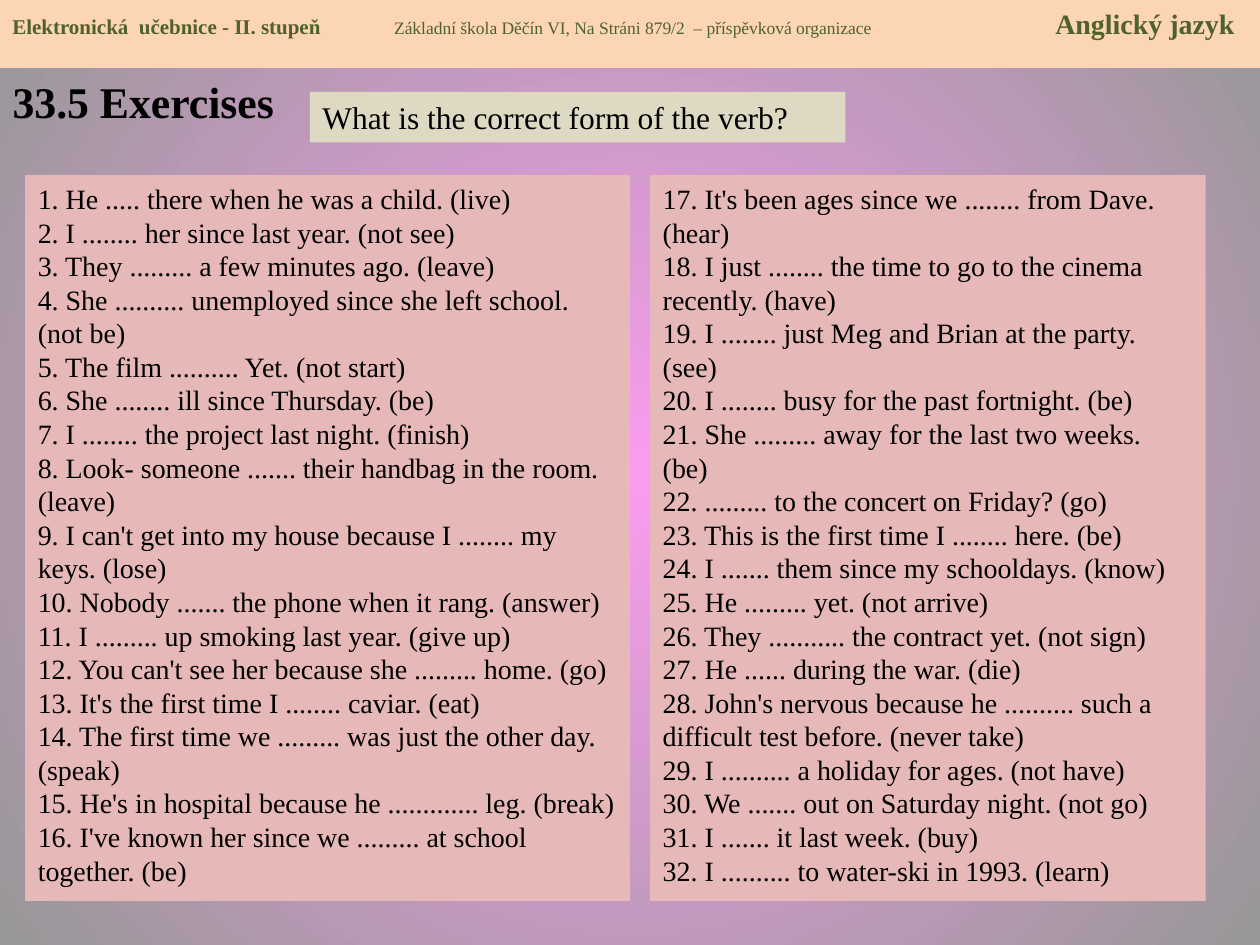
from lxml import etree
from pptx import Presentation
from pptx.dml.color import RGBColor
from pptx.enum.shapes import MSO_SHAPE
from pptx.enum.text import MSO_ANCHOR, MSO_AUTO_SIZE, PP_ALIGN
from pptx.oxml.ns import qn
from pptx.util import Inches, Pt

THEME = {
    "font": "Times New Roman",
    "ink": "000000", "green": "4F6228",
    "banner": "FCD5B5", "prompt": "DDD9C3", "panel": "E6B9B8",
    "glow": "FA9CEF", "edge": "979797",
    "title": 25, "question": 18, "list": 16, "subject": 16, "book": 12, "school": 10,
}
WIDTH, HEIGHT = 10, 7.5
BANNER_HEIGHT = 0.54
PANEL_TOP, PANEL_HEIGHT = 1.39, 5.76
PANELS = [(0.2, 4.8), (5.16, 4.41)]
HEADER_TABS = [("l", 3.03), ("r", 9.7)]

HEADER = [
    ("Elektronická  učebnice - II. stupeň", "book", True),
    ("\tZákladní škola Děčín VI, Na Stráni 879/2  – příspěvková organizace", "school", False),
    ("\tAnglický jazyk", "subject", True),
]
TITLE = "33.5 Exercises"
QUESTION = "What is the correct form of the verb?"
EXERCISES = [
    "He ..... there when he was a child. (live)",
    "I ........ her since last year. (not see)",
    "They ......... a few minutes ago. (leave)",
    "She .......... unemployed since she left school. (not be)",
    "The film .......... Yet. (not start)",
    "She ........ ill since Thursday. (be)",
    "I ........ the project last night. (finish)",
    "Look- someone ....... their handbag in the room. (leave)",
    "I can't get into my house because I ........ my keys. (lose)",
    "Nobody ....... the phone when it rang. (answer)",
    "I ......... up smoking last year. (give up)",
    "You can't see her because she ......... home. (go)",
    "It's the first time I ........ caviar. (eat)",
    "The first time we ......... was just the other day. (speak)",
    "He's in hospital because he ............. leg. (break)",
    "I've known her since we ......... at school together. (be)",
    "It's been ages since we ........ from Dave. (hear)",
    "I just ........ the time to go to the cinema recently. (have)",
    "I ........ just Meg and Brian at the party. (see)",
    "I ........ busy for the past fortnight. (be)",
    "She ......... away for the last two weeks. (be)",
    "......... to the concert on Friday? (go)",
    "This is the first time I ........ here. (be)",
    "I ....... them since my schooldays. (know)",
    "He ......... yet. (not arrive)",
    "They ........... the contract yet. (not sign)",
    "He ...... during the war. (die)",
    "John's nervous because he .......... such a difficult test before. (never take)",
    "I .......... a holiday for ages. (not have)",
    "We ....... out on Saturday night. (not go)",
    "I ....... it last week. (buy)",
    "I .......... to water-ski in 1993. (learn)",
]


def color(name):
    return RGBColor.from_string(THEME[name])


def place(shape, left, top, width, height):
    for side, value in zip(("left", "top", "width", "height"), (left, top, width, height)):
        setattr(shape, side, Inches(value))


def paint(shape, fill):
    shape.fill.solid()
    shape.fill.fore_color.rgb = color(fill)


def prepare(shape, anchor=MSO_ANCHOR.TOP):
    frame = shape.text_frame
    settings = {"word_wrap": True, "auto_size": MSO_AUTO_SIZE.NONE, "vertical_anchor": anchor}
    for name, value in settings.items():
        setattr(frame, name, value)
    return frame


def write(para, text, size, ink="ink", bold=False):
    """Add one formatted run to a left-aligned paragraph without spacing."""
    for name, value in {"alignment": PP_ALIGN.LEFT, "space_before": Pt(0)}.items():
        setattr(para, name, value)
    span = para.add_run()
    span.text = text
    for name, value in {"name": THEME["font"], "size": Pt(THEME[size]), "bold": bold}.items():
        setattr(span.font, name, value)
    span.font.color.rgb = color(ink)


def add_band(slide, area, fill):
    band = slide.shapes.add_shape(MSO_SHAPE.RECTANGLE, 0, 0, 0, 0)
    place(band, *area)
    paint(band, fill)
    band.line.fill.background()
    band.shadow.inherit = False
    return band


def set_radial_background(slide):
    fill = slide.background.fill
    fill.gradient()
    for stop, name in zip(fill.gradient_stops, ("glow", "edge")):
        stop.color.rgb = color(name)
    gradient = next(slide.element.iter(qn("a:gradFill")))
    gradient.remove(gradient.find(qn("a:lin")))
    circle = etree.SubElement(gradient, qn("a:path"), path="circle")
    etree.SubElement(circle, qn("a:fillToRect"), l="50000", t="50000", r="50000", b="50000")


def add_header(slide):
    band = add_band(slide, (0, 0, WIDTH, BANNER_HEIGHT), "banner")
    para = prepare(band).paragraphs[0]
    tabs = etree.SubElement(para._p.get_or_add_pPr(), qn("a:tabLst"))
    for align, position in HEADER_TABS:
        etree.SubElement(tabs, qn("a:tab"), pos=str(Inches(position)), algn=align)
    for text, size, bold in HEADER:
        write(para, text, size, "green", bold)


def fill_panel(panel, area, items, start):
    place(panel, *area)
    paint(panel, "panel")
    frame = prepare(panel)
    for number, item in enumerate(items, start):
        para = frame.paragraphs[0] if number == start else frame.add_paragraph()
        properties = para._p.get_or_add_pPr()
        properties.set("marL", "0")
        properties.set("indent", "0")
        etree.SubElement(properties, qn("a:buNone"))
        write(para, f"{number}. {item}", "list")


def main():
    deck = Presentation()
    deck.slide_width, deck.slide_height = Inches(WIDTH), Inches(HEIGHT)
    slide = deck.slides.add_slide(deck.slide_layouts.get_by_name("Two Content"))
    set_radial_background(slide)

    title, *panels = slide.placeholders
    place(title, 0, BANNER_HEIGHT, WIDTH, HEIGHT - BANNER_HEIGHT)
    write(prepare(title).paragraphs[0], TITLE, "title", bold=True)

    add_header(slide)
    prompt = add_band(slide, (2.46, 0.73, 4.25, 0.4), "prompt")
    write(prepare(prompt, MSO_ANCHOR.MIDDLE).paragraphs[0], QUESTION, "question")

    half = len(EXERCISES) // 2
    for index, (panel, (left, width)) in enumerate(zip(panels, PANELS)):
        first = index * half
        area = (left, PANEL_TOP, width, PANEL_HEIGHT)
        fill_panel(panel, area, EXERCISES[first:first + half], first + 1)
    deck.save("out.pptx")


if __name__ == "__main__":
    main()
